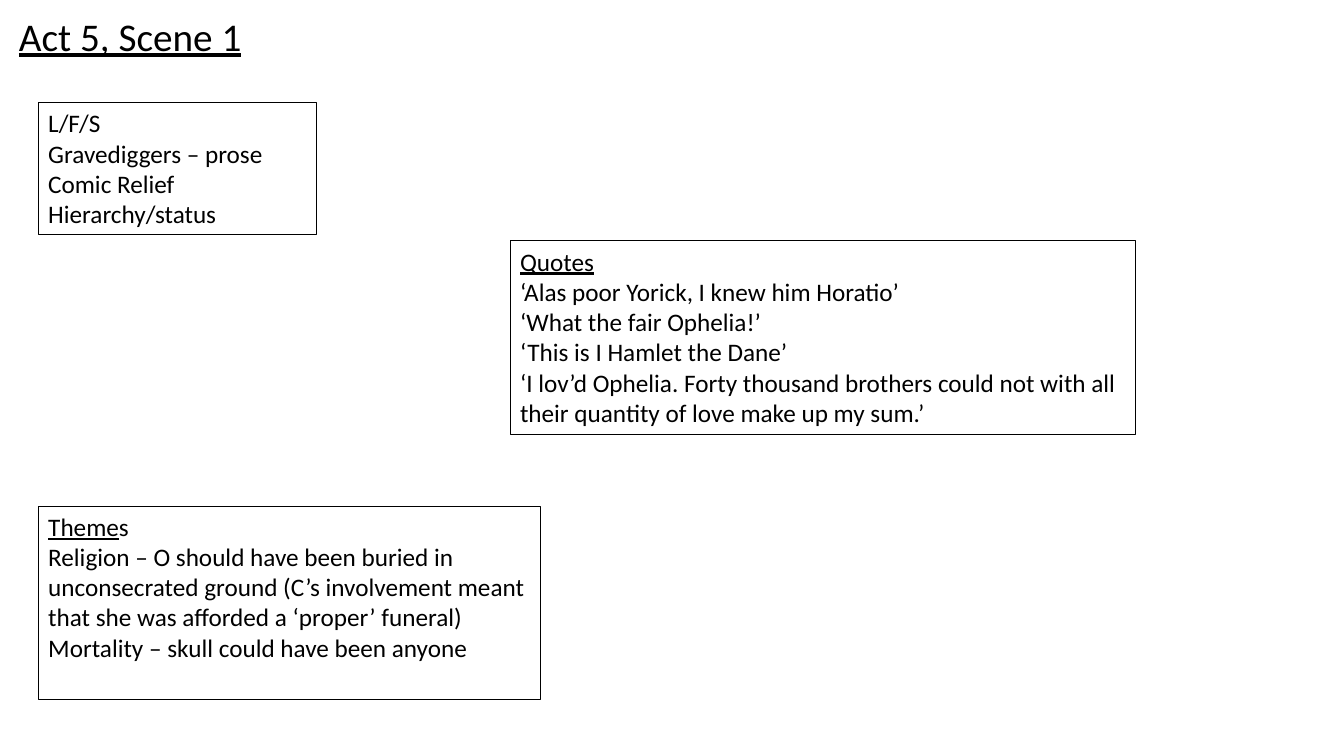
import pptx
import pptx.util
from pptx.dml.color import RGBColor
from pptx.enum.text import MSO_ANCHOR, MSO_AUTO_SIZE

SLIDE_WIDTH, SLIDE_HEIGHT = 13.33, 7.5
FONT, INK = "Calibri", "000000"
TITLE_SIZE, NOTE_SIZE = 28, 18
LEFT_MARGIN = 0.38

# Each paragraph is a pair: underlined start, plain remainder.
TITLE = [("Act 5, Scene 1", "")]
THEMES = [
    ("Theme", "s"),
    ("", "Religion – O should have been buried in unconsecrated ground "
         "(C’s involvement meant that she was afforded a ‘proper’ funeral)"),
    ("", "Mortality – skull could have been anyone"),
]
LANGUAGE_FORM_STRUCTURE = [
    ("", "L/F/S"),
    ("", "Gravediggers – prose"),
    ("", "Comic Relief"),
    ("", "Hierarchy/status"),
]
QUOTES = [
    ("Quotes", ""),
    ("", "‘Alas poor Yorick, I knew him Horatio’"),
    ("", "‘What the fair Ophelia!’"),
    ("", "‘This is I Hamlet the Dane’"),
    ("", "‘I lov’d Ophelia. Forty thousand brothers could not with all "
         "their quantity of love make up my sum.’"),
]
# Left, top, width, height in inches, then the paragraphs.
NOTES = [
    (LEFT_MARGIN, 5.02, 4.98, 1.92, THEMES),
    (LEFT_MARGIN, 1.02, 2.76, 1.31, LANGUAGE_FORM_STRUCTURE),
    (5.06, 2.39, 6.2, 1.92, QUOTES),
]


def color(hex_value):
    return RGBColor.from_string(hex_value)


def add_text(slide, left, top, width, height, paragraphs, size, wrap=True):
    box = slide.shapes.add_textbox(
        *(pptx.util.Inches(length) for length in (left, top, width, height)))
    frame = box.text_frame
    frame.word_wrap = wrap
    frame.auto_size = MSO_AUTO_SIZE.NONE
    frame.vertical_anchor = MSO_ANCHOR.TOP
    for index, parts in enumerate(paragraphs):
        paragraph = frame.add_paragraph() if index else frame.paragraphs[0]
        for text, underlined in zip(parts, (True, False)):
            if text:
                run = paragraph.add_run()
                run.text = text
                run.font.name = FONT
                run.font.size = pptx.util.Pt(size)
                run.font.underline = underlined
                run.font.color.rgb = color(INK)
    return box


def main():
    presentation = pptx.Presentation()
    presentation.slide_width = pptx.util.Inches(SLIDE_WIDTH)
    presentation.slide_height = pptx.util.Inches(SLIDE_HEIGHT)
    slide = presentation.slides.add_slide(presentation.slide_layouts[6])
    add_text(slide, 0.09, 0.07, 2.44, 0.57, TITLE, TITLE_SIZE, wrap=False)
    for left, top, width, height, paragraphs in NOTES:
        note = add_text(slide, left, top, width, height, paragraphs, NOTE_SIZE)
        note.line.color.rgb = color(INK)
        note.line.width = pptx.util.Pt(0.75)
    presentation.save("out.pptx")


if __name__ == "__main__":
    main()
